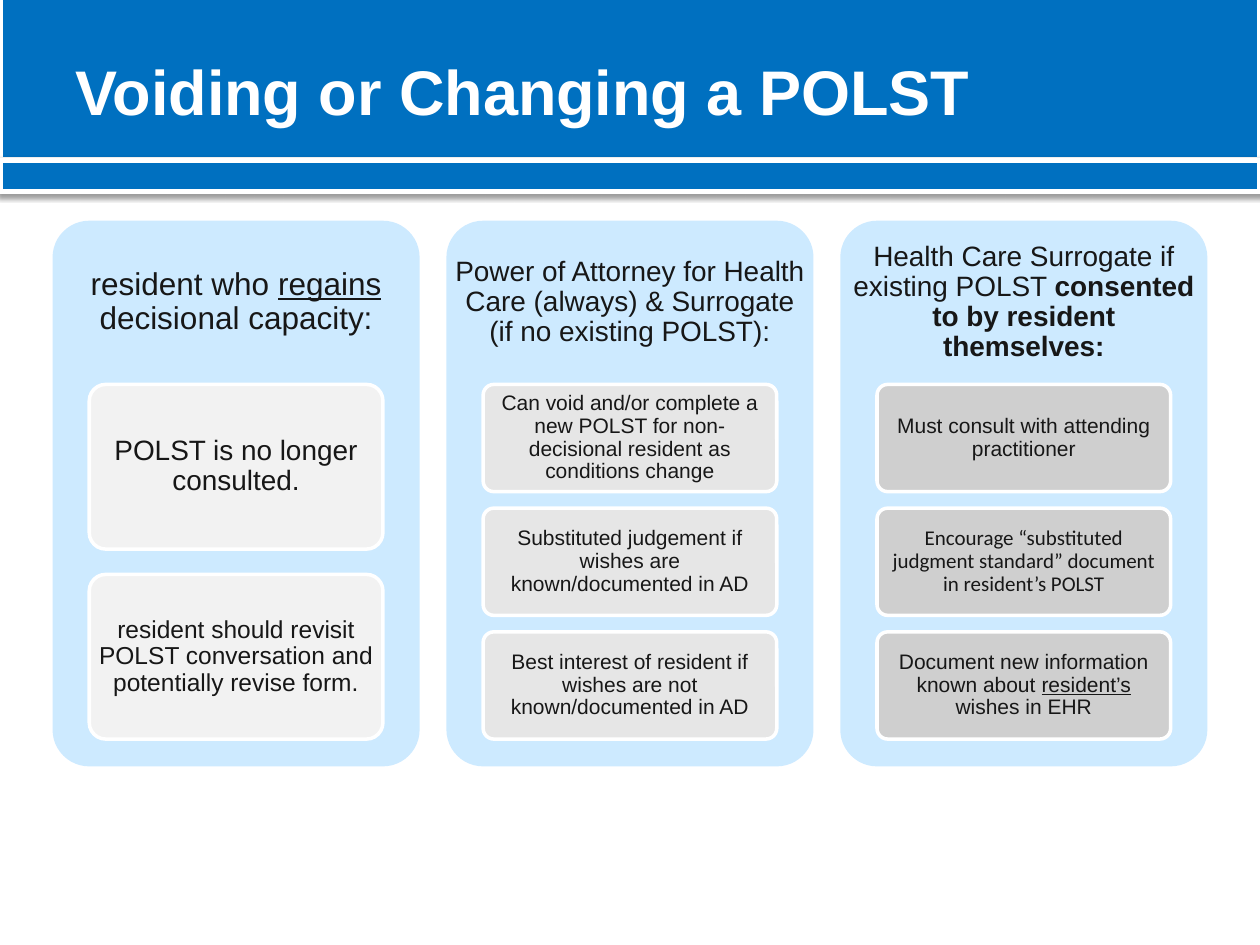
from lxml.etree import SubElement
from pptx import Presentation
from pptx.dml.color import RGBColor
from pptx.enum.shapes import MSO_SHAPE
from pptx.enum.text import MSO_ANCHOR, PP_ALIGN
from pptx.oxml.ns import qn
from pptx.util import Cm, Pt

WHITE = RGBColor(0xFF, 0xFF, 0xFF)
BLUE = RGBColor(0x00, 0x70, 0xC0)
PALE_BLUE = RGBColor(0xCD, 0xEA, 0xFF)
INK = RGBColor(0x17, 0x17, 0x17)
LIGHT_GRAY = RGBColor(0xF2, 0xF2, 0xF2)
MID_GRAY = RGBColor(0xE6, 0xE6, 0xE6)
DARK_GRAY = RGBColor(0xCF, 0xCF, 0xCF)

# Each text is a list of (words, style) runs with the style "", "bold" or "underline".
COLUMNS = [
    {
        "heading": [("resident who ", ""), ("regains", "underline"),
                    (" decisional capacity:", "")],
        "heading_size": 18,
        "fill": LIGHT_GRAY,
        "cards": [
            ([("POLST is no longer consulted.", "")], 16, "Arial"),
            ([("resident should revisit POLST conversation and potentially "
               "revise form.", "")], 14, "Arial"),
        ],
    },
    {
        "heading": [("Power of Attorney for Health Care (always) & Surrogate "
                     "(if no existing POLST):", "")],
        "heading_size": 16,
        "fill": MID_GRAY,
        "cards": [
            ([("Can void and/or complete a new POLST for non-decisional "
               "resident as conditions change", "")], 12, "Arial"),
            ([("Substituted judgement if wishes are known/documented in AD", "")],
             12, "Arial"),
            ([("Best interest of resident if wishes are not known/documented "
               "in AD", "")], 12, "Arial"),
        ],
    },
    {
        "heading": [("Health Care Surrogate if existing POLST ", ""),
                    ("consented to by resident themselves:", "bold")],
        "heading_size": 16,
        "fill": DARK_GRAY,
        "cards": [
            ([("Must consult with attending practitioner", "")], 12, "Arial"),
            ([("Encourage “substituted judgment standard” document in "
               "resident’s POLST", "")], 12, "Calibri"),
            ([("Document new information known about ", ""),
              ("resident’s", "underline"), (" wishes in EHR", "")], 12, "Arial"),
        ],
    },
]


def add_box(kind, left, top, width, height, fill, line_width=0):
    """Add a filled shape, measured in centimetres, with an optional white outline."""
    shape = slide.shapes.add_shape(kind, Cm(left), Cm(top), Cm(width), Cm(height))
    shape.shadow.inherit = False
    shape.fill.solid()
    shape.fill.fore_color.rgb = fill
    if line_width:
        shape.line.color.rgb = WHITE
        shape.line.width = Pt(line_width)
    else:
        shape.line.fill.background()
    if kind == MSO_SHAPE.ROUNDED_RECTANGLE:
        shape.adjustments[0] = 0.1
    return shape


def write_text(shape, runs, size, font="Arial", color=INK, align=PP_ALIGN.CENTER,
               spacing=0.9, margin_x=0.1, margin_y=0.08):
    frame = shape.text_frame
    frame.word_wrap = True
    frame.vertical_anchor = MSO_ANCHOR.MIDDLE
    frame.margin_left = frame.margin_right = Cm(margin_x)
    frame.margin_top = frame.margin_bottom = Cm(margin_y)
    paragraph = frame.paragraphs[0]
    paragraph.alignment = align
    paragraph.line_spacing = spacing
    for words, style in runs:
        run = paragraph.add_run()
        run.text = words
        run.font.size = Pt(size)
        run.font.name = font
        run.font.color.rgb = color
        run.font.bold = style == "bold"
        run.font.underline = style == "underline"


presentation = Presentation()
presentation.slide_width = Cm(25.4)
presentation.slide_height = Cm(19.05)
slide = presentation.slides.add_slide(presentation.slide_layouts[5])

# Header bands with a soft shadow below
for top, height in [(-0.13, 3.36), (3.23, 0.63)]:
    band = add_box(MSO_SHAPE.RECTANGLE, 0, top, 25.4, height, BLUE, line_width=3)
    effects = band._element.spPr.find(qn("a:effectLst"))
    shadow = SubElement(effects, qn("a:outerShdw"), blurRad=str(Pt(3.1)),
                        dist=str(Pt(1.6)), dir="5400000", rotWithShape="0")
    shadow_color = SubElement(shadow, qn("a:srgbClr"), val="000000")
    SubElement(shadow_color, qn("a:alpha"), val="38000")

# Title, brought in front of the bands
title = slide.shapes.title
title.left, title.top, title.width, title.height = Cm(1.27), Cm(0.23), Cm(22.86), Cm(3.18)
write_text(title, [("Voiding or Changing a POLST", "bold")], 36, color=WHITE,
           align=PP_ALIGN.LEFT, spacing=1, margin_x=0.25, margin_y=0.13)
slide.shapes._spTree.append(title._element)

# Three panels, each with a heading and a stack of equal cards
PANEL_LEFT, PANEL_TOP, PANEL_WIDTH, PANEL_HEIGHT = 1.06, 4.45, 7.4, 11
PANEL_PITCH = 7.94
HEADING_HEIGHT = 3.3
CARD_INSET = 0.74
STACK_HEIGHT = 7.15
GAP_RATIO = 2 / 13  # gap between cards, as a share of the card height

for index, column in enumerate(COLUMNS):
    left = PANEL_LEFT + index * PANEL_PITCH
    add_box(MSO_SHAPE.ROUNDED_RECTANGLE, left, PANEL_TOP, PANEL_WIDTH, PANEL_HEIGHT,
            PALE_BLUE)
    heading = slide.shapes.add_textbox(Cm(left), Cm(PANEL_TOP), Cm(PANEL_WIDTH),
                                       Cm(HEADING_HEIGHT))
    write_text(heading, column["heading"], column["heading_size"],
               margin_x=0.17, margin_y=0.17)

    count = len(column["cards"])
    card_height = STACK_HEIGHT / (count + (count - 1) * GAP_RATIO)
    for row, (runs, size, font) in enumerate(column["cards"]):
        card_top = PANEL_TOP + HEADING_HEIGHT + row * card_height * (1 + GAP_RATIO)
        card = add_box(MSO_SHAPE.ROUNDED_RECTANGLE, left + CARD_INSET, card_top,
                       PANEL_WIDTH - 2 * CARD_INSET, card_height, column["fill"],
                       line_width=2)
        write_text(card, runs, size, font=font)

presentation.save("out.pptx")
